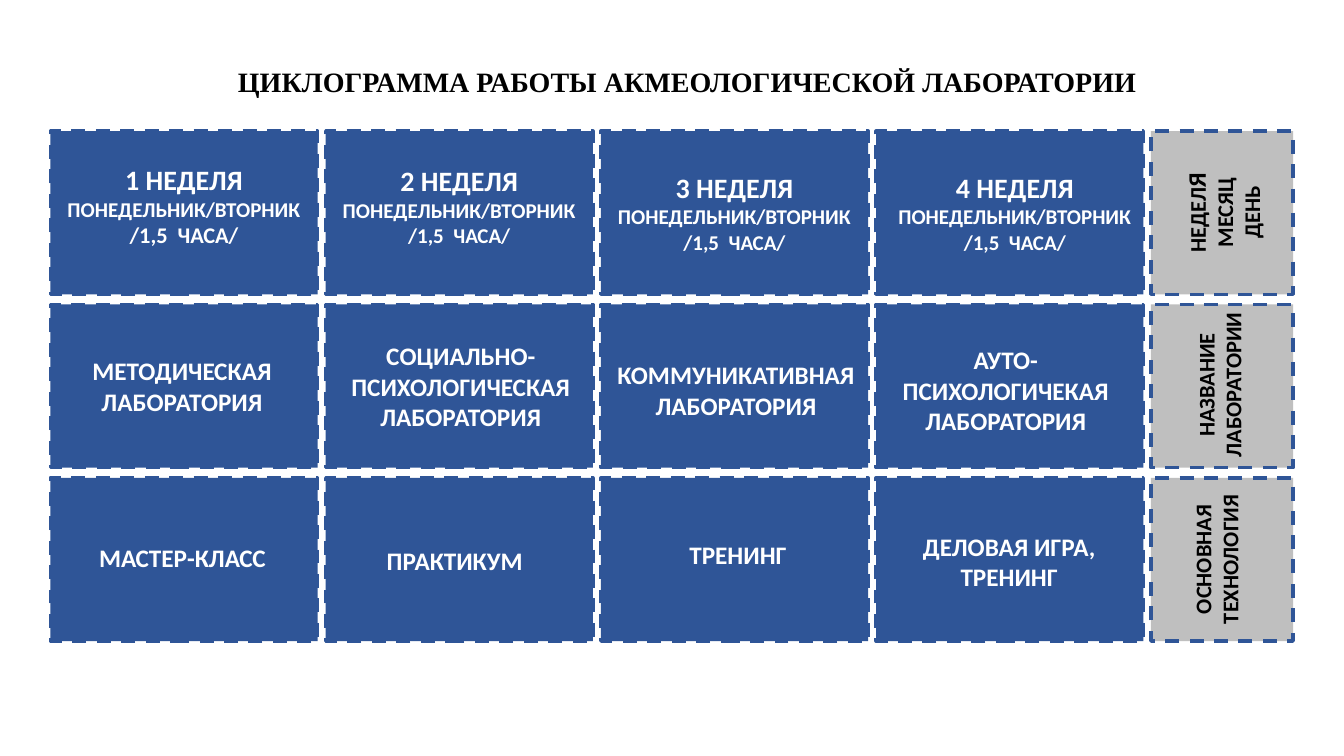
from pptx import Presentation
from pptx.dml.color import RGBColor
from pptx.enum.dml import MSO_LINE
from pptx.enum.shapes import MSO_SHAPE
from pptx.enum.text import MSO_ANCHOR, MSO_AUTO_SIZE, PP_ALIGN
from pptx.util import Inches, Pt

COLORS = {"blue": "2F5597", "grey": "BFBFBF", "white": "FFFFFF", "black": "000000"}
COLUMN_LEFT, COLUMN_STEP, COLUMN_COUNT = 0.5, 2.73, 4
ROW_TOP, ROW_STEP, ROW_COUNT = 1.3, 1.72, 3
CELL_WIDTH, CELL_HEIGHT = 2.65, 1.62
LABEL_LEFT, LABEL_HEIGHT = 11.31, 1.41

DAYS = "ПОНЕДЕЛЬНИК/ВТОРНИК"
HOURS = "/1,5  ЧАСА/"

CAPTIONS = [
    ((0.64, 3.48, 2.33, 0.71), ["МЕТОДИЧЕСКАЯ", "ЛАБОРАТОРИЯ"]),
    ((3.16, 3.33, 2.82, 1.01), ["СОЦИАЛЬНО-ПСИХОЛОГИЧЕСКАЯ", "ЛАБОРАТОРИЯ"]),
    ((5.56, 3.52, 3.48, 0.71), ["КОММУНИКАТИВНАЯ", "ЛАБОРАТОРИЯ"]),
    ((8.65, 3.37, 2.65, 1.01), ["АУТО-", "ПСИХОЛОГИЧЕКАЯ", "ЛАБОРАТОРИЯ"]),
    ((0.77, 5.33, 2.08, 0.4), ["МАСТЕР-КЛАСС"]),
    ((3.1, 5.36, 2.82, 0.4), ["ПРАКТИКУМ"]),
    ((6.52, 5.3, 1.6, 0.4), ["ТРЕНИНГ"]),
    ((8.78, 5.22, 2.46, 0.71), ["ДЕЛОВАЯ ИГРА,", "ТРЕНИНГ"]),
]


def rgb(name):
    return RGBColor.from_string(COLORS[name])


def sized(lines, size):
    return [[(line, size)] for line in lines]


def week_lines(number, hours_size=15):
    return [[(f"{number} НЕДЕЛЯ", 20)], [(DAYS, 15)], [(HOURS, hours_size)]]


def write(shape, lines, color, font="Calibri", align=PP_ALIGN.CENTER):
    frame = shape.text_frame
    frame.word_wrap = True
    for index, runs in enumerate(lines):
        paragraph = frame.add_paragraph() if index else frame.paragraphs[0]
        paragraph.alignment = align
        for text, size in runs:
            run = paragraph.add_run()
            run.text = text
            run.font.color.rgb = rgb(color)
            for name, value in {"name": font, "size": Pt(size), "bold": True}.items():
                setattr(run.font, name, value)


def add_cell(group, box, fill, rotation=0):
    shape = group.shapes.add_shape(MSO_SHAPE.RECTANGLE, *map(Inches, box))
    shape.shadow.inherit = False
    shape.rotation = rotation
    shape.fill.solid()
    shape.fill.fore_color.rgb = rgb(fill)
    shape.line.color.rgb = rgb("blue")
    shape.line.width = Pt(2.5)
    shape.line.dash_style = MSO_LINE.DASH
    shape.text_frame.vertical_anchor = MSO_ANCHOR.MIDDLE
    return shape


def add_row(slide, top):
    group = slide.shapes.add_group_shape()
    cells = [
        add_cell(group, (COLUMN_LEFT + column * COLUMN_STEP, top, CELL_WIDTH, CELL_HEIGHT), "blue")
        for column in range(COLUMN_COUNT)
    ]
    label_top = top + (CELL_HEIGHT - LABEL_HEIGHT) / 2
    label = add_cell(group, (LABEL_LEFT, label_top, CELL_HEIGHT, LABEL_HEIGHT), "grey", 270)
    return cells, label


def add_caption(slide, box, lines, color="white", rotation=0):
    caption = slide.shapes.add_textbox(*map(Inches, box))
    caption.rotation = rotation
    write(caption, lines, color)


def add_title(slide):
    title = slide.shapes.title
    box = {"left": 2.26, "top": 0.59, "width": 9.87, "height": 0.44}
    for name, value in box.items():
        setattr(title, name, Inches(value))
    title.text_frame.auto_size = MSO_AUTO_SIZE.NONE
    title.text_frame.vertical_anchor = MSO_ANCHOR.TOP
    write(title, [[("ЦИКЛОГРАММА РАБОТЫ АКМЕОЛОГИЧЕСКОЙ ЛАБОРАТОРИИ", 20)]],
          "black", "Times New Roman", PP_ALIGN.LEFT)


def main():
    presentation = Presentation()
    presentation.slide_width = Inches(13.33)
    presentation.slide_height = Inches(7.5)
    slide = presentation.slides.add_slide(presentation.slide_layouts[5])
    add_title(slide)

    rows = [add_row(slide, ROW_TOP + row * ROW_STEP) for row in range(ROW_COUNT)]
    week_cells = rows[0][0]
    for number, hours_size in ((1, 16), (2, 15)):
        cell = week_cells[number - 1]
        cell.text_frame.margin_bottom = Inches(0.19)
        write(cell, week_lines(number, hours_size), "white")
    technology_label = rows[-1][1]
    technology_label.text_frame.margin_bottom = Inches(0.17)
    write(technology_label, sized(["ОСНОВНАЯ ТЕХНОЛОГИЯ"], 16), "black")

    for number, left in ((3, 5.96), (4, 8.74)):
        add_caption(slide, (left, 1.64, 2.65, 0.94), week_lines(number))
    for box, lines in CAPTIONS:
        add_caption(slide, box, sized(lines, 18))

    period = [[("НЕДЕЛ", 16), ("Я", 18)], *sized(["МЕСЯЦ", "ДЕНЬ"], 16)]
    add_caption(slide, (11.57, 1.64, 1.12, 0.94), period, "black", 270)
    laboratory = sized(["НАЗВАНИЕ", "ЛАБОРАТОРИИ"], 16)
    add_caption(slide, (11.17, 3.5, 1.85, 0.64), laboratory, "black", 270)

    presentation.save("out.pptx")


if __name__ == "__main__":
    main()
